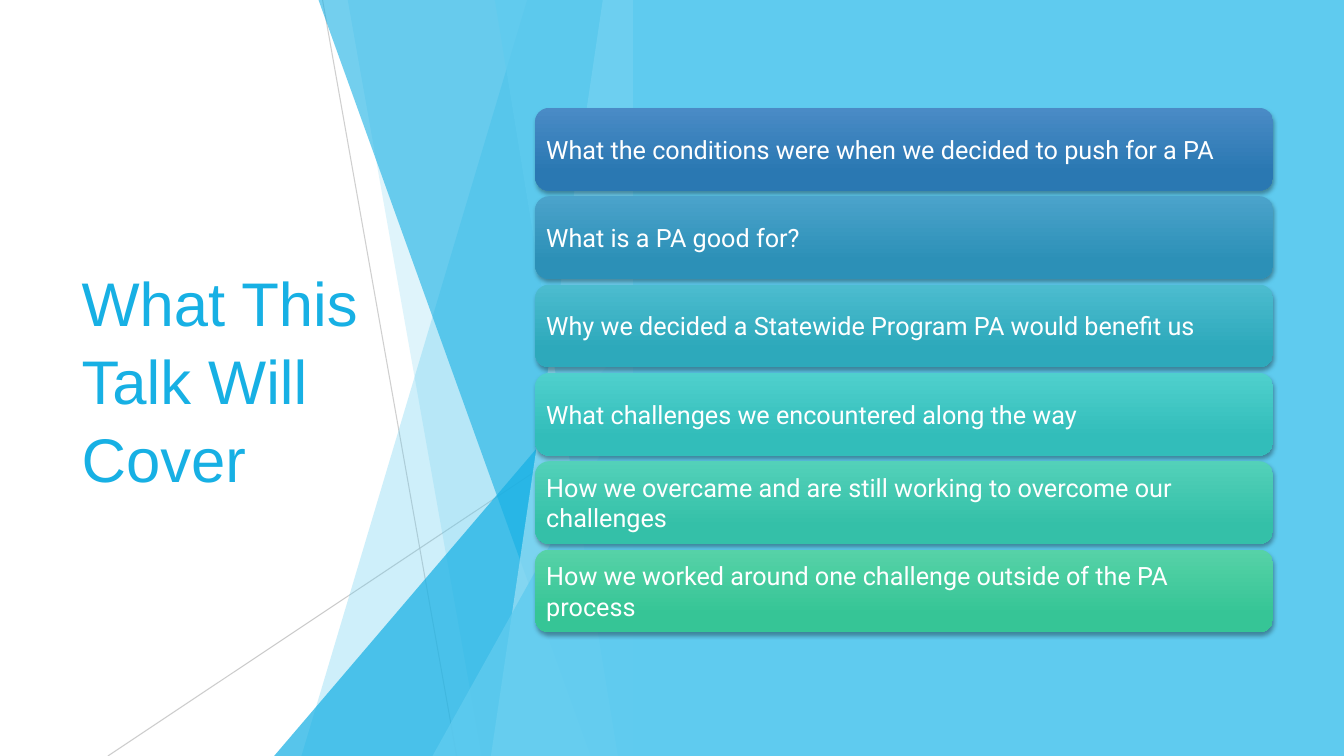
from dataclasses import dataclass

from lxml import etree
from pptx import Presentation
from pptx.dml.color import RGBColor
from pptx.enum.shapes import MSO_CONNECTOR, MSO_SHAPE
from pptx.enum.text import MSO_ANCHOR, PP_ALIGN
from pptx.oxml.ns import qn
from pptx.util import Pt

STRAIGHT = MSO_CONNECTOR.STRAIGHT
RECTANGLE = MSO_SHAPE.RECTANGLE
ROUNDED = MSO_SHAPE.ROUNDED_RECTANGLE
TRIANGLE = MSO_SHAPE.ISOSCELES_TRIANGLE
MIDDLE = MSO_ANCHOR.MIDDLE
LEFT = PP_ALIGN.LEFT

WHITE = RGBColor(0xFF, 0xFF, 0xFF)
BLACK = RGBColor(0x00, 0x00, 0x00)
GREY = RGBColor(0xBF, 0xBF, 0xBF)
SKY = RGBColor(0x5F, 0xCB, 0xEF)
BLUE = RGBColor(0x17, 0xB0, 0xE4)
PALE = RGBColor(0x9F, 0xE0, 0xF5)

WIDTH, HEIGHT = 960, 540
EDGE = 452.16
BAR_LEFT, BAR_TOP, BAR_WIDTH, BAR_HEIGHT = 382.32, 77.04, 527.04, 59.04
BAR_PITCH = 63.1


@dataclass
class Ray:
    x1: float
    y1: float
    x2: float
    y2: float
    opacity: int


@dataclass
class Facet:
    top_x: float
    bottom_x: float
    color: RGBColor
    opacity: int


@dataclass
class Wedge:
    left: float
    top: float
    color: RGBColor
    opacity: int


@dataclass
class Bar:
    text: str
    light: RGBColor
    dark: RGBColor


RAYS = [
    Ray(230.4, 0, 326.16, HEIGHT, 75),
    Ray(EDGE, 290.16, 77.04, HEIGHT, 80),
]

FACETS = [
    Facet(376.56, 215.28, SKY, 30),
    Facet(248.4, 344.16, SKY, 20),
    Wedge(195.84, 239.76, BLUE, 72),
    Facet(227.52, 421.92, BLUE, 60),
    Facet(430.56, 350.64, PALE, 70),
    Facet(353.52, 441.36, SKY, 65),
    Wedge(308.88, 282.96, SKY, 80),
]

BARS = [
    Bar("What the conditions were when we decided to push for a PA",
        RGBColor(0x4A, 0x8B, 0xC6), RGBColor(0x2A, 0x78, 0xB2)),
    Bar("What is a PA good for?",
        RGBColor(0x4B, 0xA3, 0xCB), RGBColor(0x2C, 0x90, 0xB7)),
    Bar("Why we decided a Statewide Program PA would benefit us",
        RGBColor(0x4C, 0xBC, 0xCF), RGBColor(0x2D, 0xA9, 0xBB)),
    Bar("What challenges we encountered along the way",
        RGBColor(0x4F, 0xD0, 0xCD), RGBColor(0x32, 0xBD, 0xBA)),
    Bar("How we overcame and are still working to overcome our challenges",
        RGBColor(0x53, 0xD1, 0xB9), RGBColor(0x34, 0xC0, 0xA8)),
    Bar("How we worked around one challenge outside of the PA process",
        RGBColor(0x56, 0xD2, 0xA7), RGBColor(0x36, 0xC5, 0x96)),
]


def set_opacity(element, percent: int) -> None:
    color = next(element.iter(qn("a:srgbClr")))
    etree.SubElement(color, qn("a:alpha"), val=str(percent * 1000))


def fill_plain(shape, color: RGBColor, opacity: int = 100) -> None:
    shape.shadow.inherit = False
    shape.fill.solid()
    shape.fill.fore_color.rgb = color
    shape.line.fill.background()
    if opacity < 100:
        set_opacity(shape.element.spPr, opacity)


def add_ray(s, ray: Ray) -> None:
    line = s.shapes.add_connector(STRAIGHT, Pt(ray.x1), Pt(ray.y1), Pt(ray.x2), Pt(ray.y2))
    line.line.color.rgb = GREY
    line.line.width = Pt(0.75)
    set_opacity(line.element.spPr, ray.opacity)
    etree.SubElement(line.element.spPr, qn("a:effectLst"))


def add_facet(s, facet: Facet) -> None:
    outline = s.shapes.build_freeform(Pt(facet.top_x), Pt(0))
    outline.add_line_segments(
        [(Pt(EDGE), Pt(0)), (Pt(EDGE), Pt(HEIGHT)), (Pt(facet.bottom_x), Pt(HEIGHT))])
    fill_plain(outline.convert_to_shape(), facet.color, facet.opacity)


def add_wedge(s, wedge: Wedge) -> None:
    sp = s.shapes.add_shape(TRIANGLE, Pt(wedge.left), Pt(wedge.top),
                            Pt(EDGE - wedge.left), Pt(HEIGHT - wedge.top))
    sp.adjustments[0] = 1
    fill_plain(sp, wedge.color, wedge.opacity)


def add_text(p, text: str, font: str, size: float, color: RGBColor) -> None:
    p.alignment = LEFT
    r = p.add_run()
    r.text = text
    r.font.name = font
    r.font.size = Pt(size)
    r.font.color.rgb = color


def add_title(s, text: str) -> None:
    title = s.shapes.title
    title.left, title.top = Pt(51.12), Pt(108.72)
    title.width, title.height = Pt(279.36), Pt(322.56)
    s.shapes.element.append(title.element)
    tf = title.text_frame
    tf.word_wrap = True
    tf.vertical_anchor = MIDDLE
    p = tf.paragraphs[0]
    p.line_spacing = 1.05
    add_text(p, text, "Arial", 44, BLUE)


def add_shadow(shape) -> None:
    shape.shadow.inherit = False
    effects = shape.element.spPr.find(qn("a:effectLst"))
    shadow = etree.SubElement(effects, qn("a:outerShdw"), blurRad=str(Pt(3)),
                              dist=str(Pt(2)), dir="5400000", rotWithShape="0")
    etree.SubElement(shadow, qn("a:srgbClr"), val=str(BLACK))
    set_opacity(shadow, 35)


def add_bar(s, bar: Bar, top: float) -> None:
    sp = s.shapes.add_shape(ROUNDED, Pt(BAR_LEFT), Pt(top), Pt(BAR_WIDTH), Pt(BAR_HEIGHT))
    sp.fill.gradient()
    sp.fill.gradient_angle = 270
    stops = zip(sp.fill.gradient_stops, (0, 0.78), (bar.light, bar.dark))
    for stop, position, color in stops:
        stop.position = position
        stop.color.rgb = color
    sp.line.fill.background()
    add_shadow(sp)
    tf = sp.text_frame
    tf.word_wrap = True
    tf.vertical_anchor = MIDDLE
    tf.margin_left = tf.margin_right = tf.margin_top = tf.margin_bottom = Pt(5)
    add_text(tf.paragraphs[0], bar.text, "Roboto", 18, WHITE)


def main() -> None:
    prs = Presentation()
    prs.slide_width, prs.slide_height = Pt(WIDTH), Pt(HEIGHT)
    s = prs.slides.add_slide(prs.slide_layouts[5])
    s.background.fill.solid()
    s.background.fill.fore_color.rgb = WHITE
    for ray in RAYS:
        add_ray(s, ray)
    for facet in FACETS:
        if isinstance(facet, Wedge):
            add_wedge(s, facet)
        else:
            add_facet(s, facet)
    add_title(s, "What This Talk Will Cover")
    panel = s.shapes.add_shape(RECTANGLE, Pt(EDGE), Pt(0), Pt(WIDTH - EDGE), Pt(HEIGHT))
    fill_plain(panel, SKY)
    for i, bar in enumerate(BARS):
        add_bar(s, bar, BAR_TOP + i * BAR_PITCH)
    prs.save("out.pptx")


if __name__ == "__main__":
    main()
